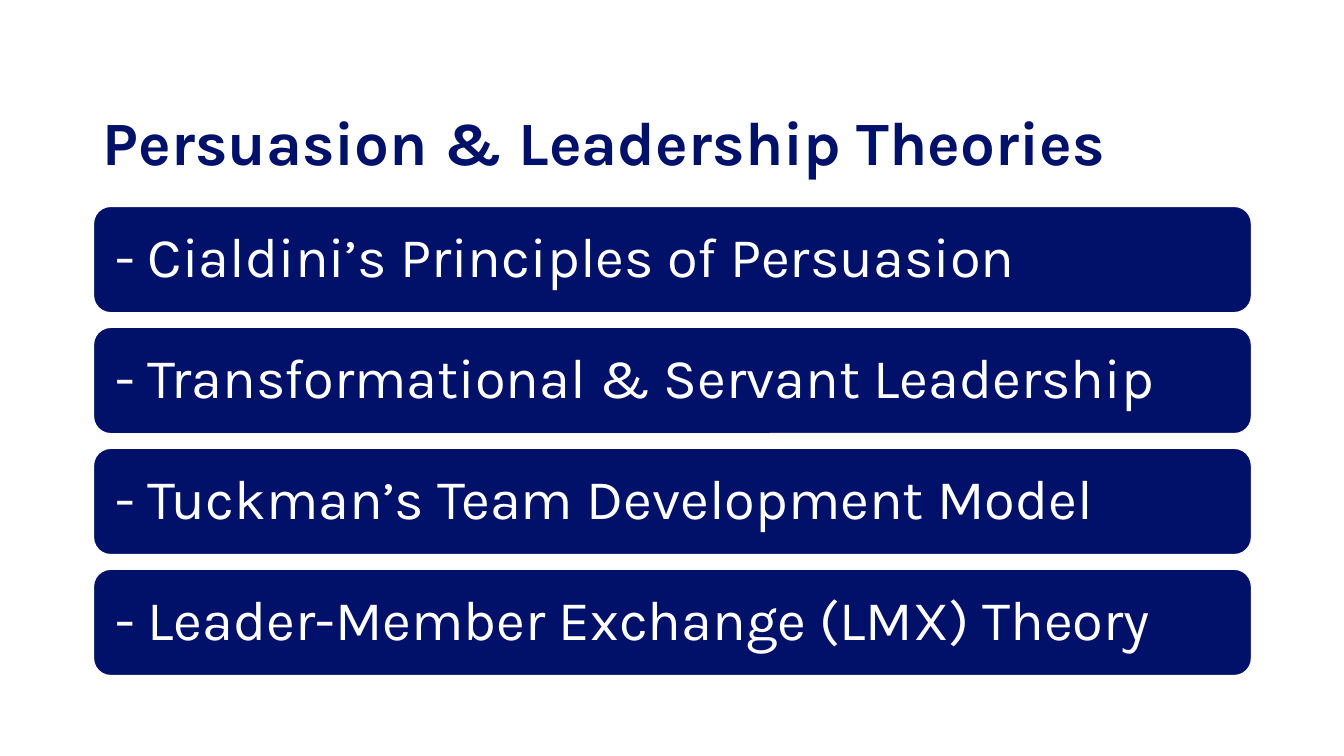
from pptx import Presentation
from pptx.dml.color import RGBColor
from pptx.enum.shapes import MSO_SHAPE
from pptx.enum.text import MSO_ANCHOR, PP_ALIGN
from pptx.util import Inches, Pt

ROUNDED = MSO_SHAPE.ROUNDED_RECTANGLE
MIDDLE = MSO_ANCHOR.MIDDLE
BOTTOM = MSO_ANCHOR.BOTTOM
LEFT = PP_ALIGN.LEFT

TITLE = "Persuasion & Leadership Theories"
THEORIES = [
    "- Cialdini’s Principles of Persuasion",
    "- Transformational & Servant Leadership",
    "- Tuckman’s Team Development Model",
    "- Leader-Member Exchange (LMX) Theory",
]
COLORS = {"navy": "011169", "white": "FFFFFF"}
TITLE_FONT = {"name": "Karla", "size": Pt(44), "bold": True}
THEORY_FONT = {"name": "Karla", "size": Pt(40), "bold": False}
TITLE_FRAME = {
    "word_wrap": True, "vertical_anchor": BOTTOM,
    "margin_left": Inches(0.1), "margin_right": Inches(0.1),
    "margin_top": Inches(0.05), "margin_bottom": Inches(0.08),
}
THEORY_FRAME = {
    "word_wrap": True, "vertical_anchor": MIDDLE,
    "margin_left": Inches(0.17), "margin_right": Inches(0.17),
    "margin_top": Inches(0.17), "margin_bottom": Inches(0.17),
}
MARGIN, CONTENT_WIDTH = 0.92, 11.5
TITLE_TOP, TITLE_HEIGHT = 0.4, 1.45
BAR_TOP, BAR_HEIGHT, BAR_STEP = 2.04, 1.07, 1.2


def color(name):
    return RGBColor.from_string(COLORS[name])


def apply(target, values):
    for name, value in values.items():
        setattr(target, name, value)


def write(shape, text, frame_format, font_format, color_name):
    frame = shape.text_frame
    apply(frame, frame_format)
    paragraph = frame.paragraphs[0]
    apply(paragraph, {"alignment": LEFT, "line_spacing": 0.9})
    run = paragraph.add_run()
    run.text = text
    apply(run.font, font_format)
    run.font.color.rgb = color(color_name)


def add_bar(slide, index, text):
    bar = slide.shapes.add_shape(
        ROUNDED, Inches(MARGIN), Inches(BAR_TOP + index * BAR_STEP),
        Inches(CONTENT_WIDTH), Inches(BAR_HEIGHT))
    bar.shadow.inherit = False
    bar.fill.solid()
    bar.fill.fore_color.rgb = color("navy")
    bar.line.color.rgb = color("white")
    bar.line.width = Pt(2)
    write(bar, text, THEORY_FRAME, THEORY_FONT, "white")


def main():
    presentation = Presentation()
    presentation.slide_width = Inches(13.33)
    presentation.slide_height = Inches(7.5)
    slide = presentation.slides.add_slide(presentation.slide_layouts[6])
    title = slide.shapes.add_textbox(
        Inches(MARGIN), Inches(TITLE_TOP), Inches(CONTENT_WIDTH), Inches(TITLE_HEIGHT))
    write(title, TITLE, TITLE_FRAME, TITLE_FONT, "navy")
    for index, text in enumerate(THEORIES):
        add_bar(slide, index, text)
    presentation.save("out.pptx")


if __name__ == "__main__":
    main()
